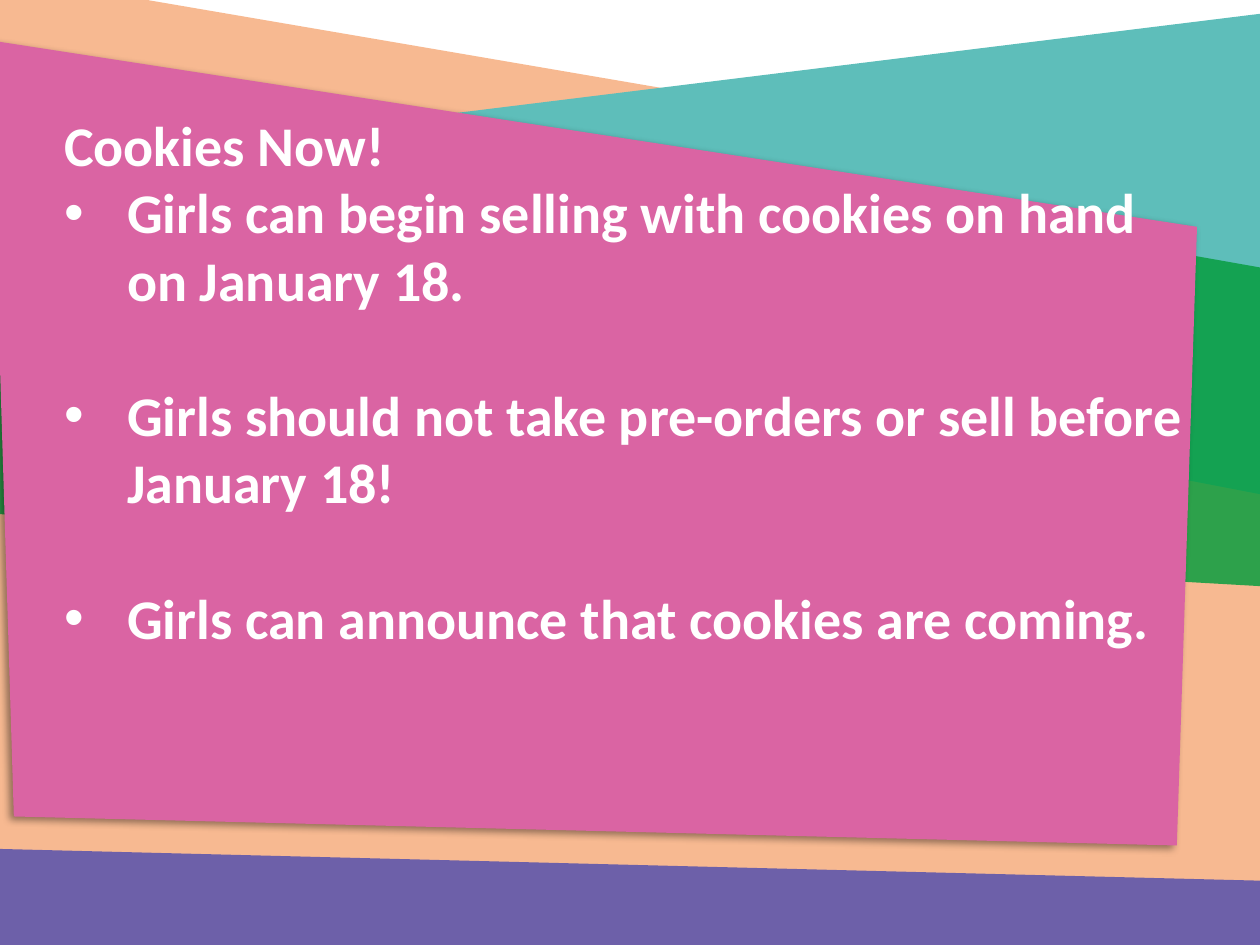
from lxml import etree
from pptx import Presentation
from pptx.dml.color import RGBColor
from pptx.enum.text import MSO_AUTO_SIZE
from pptx.oxml.ns import qn
from pptx.util import Inches, Pt

FIT_SHAPE = MSO_AUTO_SIZE.SHAPE_TO_FIT_TEXT
BLANK_LAYOUT = 6

PEACH = RGBColor(0xF4, 0x93, 0x53)
TEAL = RGBColor(0x5E, 0xBE, 0xBA)
GREEN = RGBColor(0x05, 0x9D, 0x3E)
PURPLE = RGBColor(0x6D, 0x60, 0xA9)
PINK = RGBColor(0xDA, 0x64, 0xA3)
WHITE = RGBColor(0xFF, 0xFF, 0xFF)
BLACK = RGBColor(0x00, 0x00, 0x00)

BANDS = [
    (PEACH, 64, [(-0.35, -0.26), (-0.13, 7.36), (10.17, 7.65), (10.35, 1.57)]),
    (TEAL, 100, [(-0.05, 1.35), (10.24, 0.08), (10.25, 3.97), (-0.18, 1.96)]),
    (GREEN, 83, [(-0.18, 0.32), (10.38, 2.19), (10.32, 4.67), (-0.18, 4.07)]),
    (PURPLE, 100, [(-0.32, 6.73), (-0.1, 7.86), (10.2, 7.9), (10.39, 7)]),
]
PANEL_CORNERS = [(-0.08, 0.32), (0.11, 6.48), (9.34, 6.71), (9.5, 1.8)]

HEADING = "Cookies Now!"
RULES = [
    "Girls can begin selling with cookies on hand on January 18.",
    "Girls should not take pre-orders or sell before January 18!",
    "Girls can announce that cookies are coming.",
]


def set_alpha(color_element, percent):
    etree.SubElement(color_element, qn("a:alpha"), val=str(percent * 1000))


def add_polygon(slide, corners, color, opacity=100):
    points = [(Inches(x), Inches(y)) for x, y in corners]
    builder = slide.shapes.build_freeform(*points[0])
    builder.add_line_segments(points[1:], close=True)
    shape = builder.convert_to_shape()
    shape.shadow.inherit = False
    shape.line.fill.background()
    shape.fill.solid()
    shape.fill.fore_color.rgb = color
    if opacity < 100:
        set_alpha(shape.fill._xPr.find(qn("a:solidFill"))[0], opacity)
    return shape


def add_shadow(shape, color, opacity, blur, distance, angle):
    effects = shape._element.spPr.find(qn("a:effectLst"))
    shadow = etree.SubElement(
        effects, qn("a:outerShdw"), blurRad=str(Pt(blur)), dist=str(Pt(distance)),
        dir=str(angle * 60000), algn="tr", rotWithShape="0")
    set_alpha(etree.SubElement(shadow, qn("a:srgbClr"), val=str(color)), opacity)


def add_bullet(para, indent):
    properties = para._p.get_or_add_pPr()
    properties.set("marL", str(Inches(indent)))
    properties.set("indent", str(Inches(-indent)))
    etree.SubElement(properties, qn("a:buFont"), typeface="Arial")
    etree.SubElement(properties, qn("a:buChar"), char="•")


def write_para(para, text, size=32, color=WHITE, bold=True, bullet=False, before=0):
    if bullet:
        add_bullet(para, 0.5)
    if before:
        para.space_before = Pt(before)
    span = para.add_run()
    span.text = text
    span.font.name = "Calibri"
    span.font.size = Pt(size)
    span.font.bold = bold
    span.font.color.rgb = color


def add_announcement(slide):
    box = slide.shapes.add_textbox(Inches(0.41), Inches(0.83), Inches(9.25), Inches(4.41))
    frame = box.text_frame
    frame.word_wrap = True
    frame.auto_size = FIT_SHAPE
    write_para(frame.paragraphs[0], HEADING)
    for index, rule in enumerate(RULES):
        write_para(frame.add_paragraph(), rule, bullet=True, before=39 if index else 0)


def main():
    deck = Presentation()
    deck.slide_width, deck.slide_height = Inches(10), Inches(7.5)
    page = deck.slides.add_slide(deck.slide_layouts[BLANK_LAYOUT])
    for color, opacity, corners in BANDS:
        add_polygon(page, corners, color, opacity)
    panel = add_polygon(page, PANEL_CORNERS, PINK)
    add_shadow(panel, BLACK, opacity=40, blur=4, distance=3, angle=135)
    add_announcement(page)
    deck.save("out.pptx")


if __name__ == "__main__":
    main()
